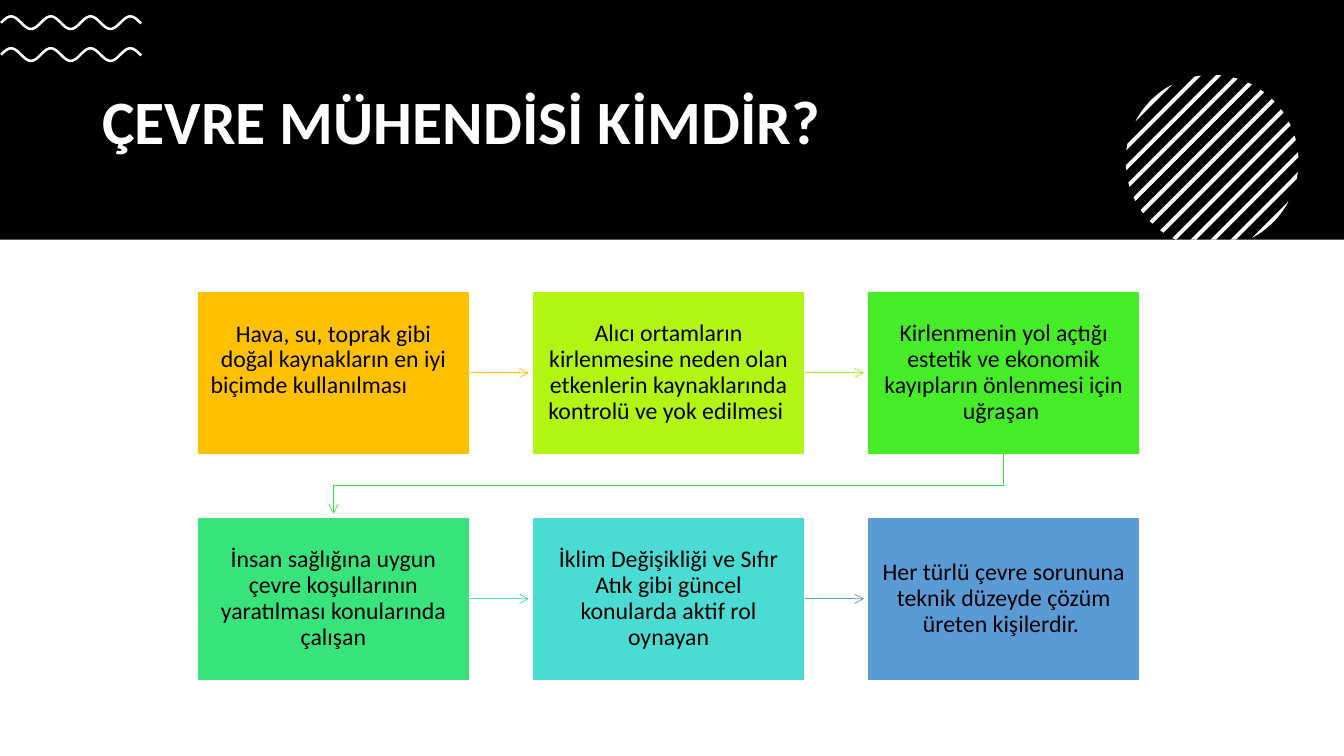
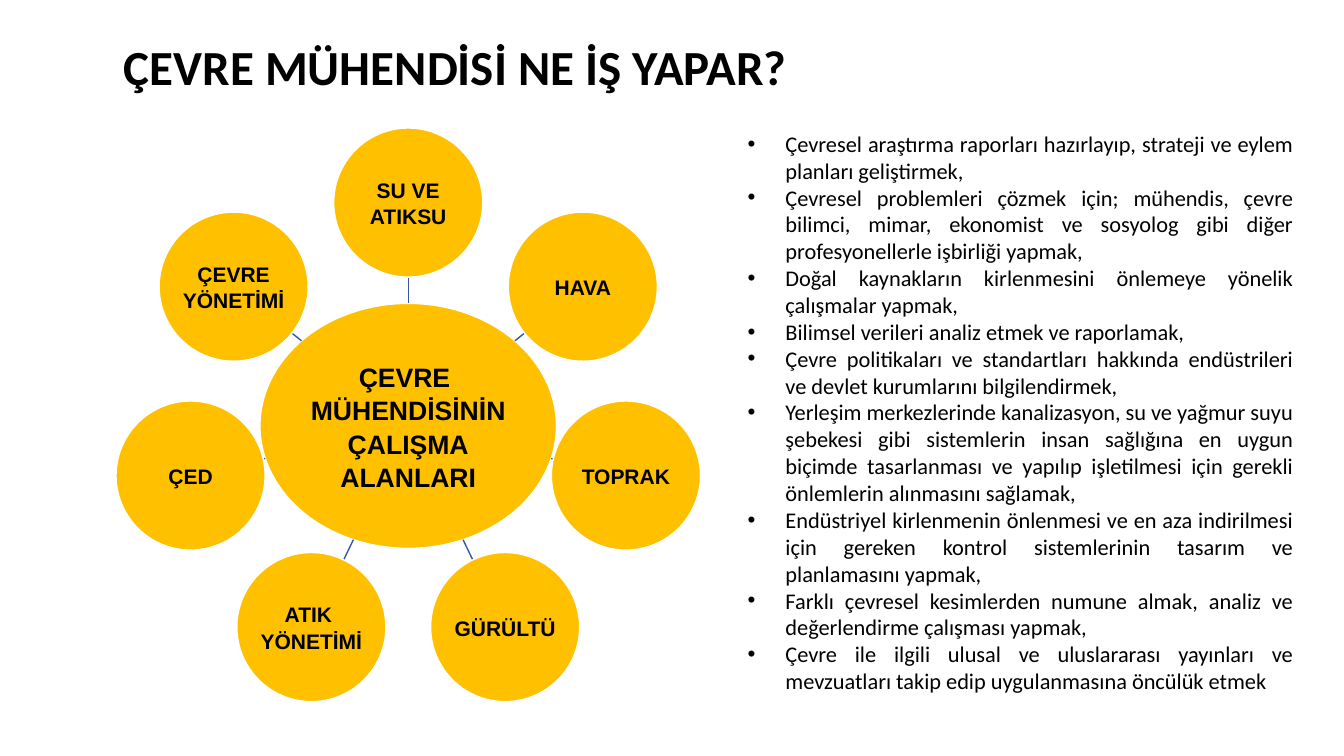
from math import cos, pi, sin, sqrt

from lxml import etree
from pptx import Presentation
from pptx.dml.color import RGBColor
from pptx.enum import shapes as sh, text as tx
from pptx.oxml.ns import qn
from pptx.util import Pt

# Shared look
BLACK, WHITE, AMBER, SPOKE = "000000", "FFFFFF", "FFC000", "365B9D"
BODY_FONT, HUB_FONT = "Calibri", "Arial"
CENTER, LEFT, JUSTIFY = tx.PP_ALIGN.CENTER, tx.PP_ALIGN.LEFT, tx.PP_ALIGN.JUSTIFY

# Slide 1 content: (paragraphs with alignment), box colour, colour of the arrow that follows
WHO_TITLE = "ÇEVRE MÜHENDİSİ KİMDİR?"
STEPS = [
    ([("Hava, su, toprak gibi doğal kaynakların en iyi", CENTER),
      ("biçimde kullanılması", LEFT)], "FFC000", "FFC000"),
    ([("Alıcı ortamların kirlenmesine neden olan etkenlerin kaynaklarında kontrolü "
       "ve yok edilmesi ", CENTER)], "B2F514", "94F319"),
    ([("Kirlenmenin yol açtığı estetik ve ekonomik kayıpların önlenmesi için uğraşan ",
       CENTER)], "46EC27", "30E845"),
    ([("İnsan sağlığına uygun çevre koşullarının yaratılması konularında çalışan",
       CENTER)], "39E37B", "46DEBF"),
    ([("İklim Değişikliği ve Sıfır Atık gibi güncel konularda aktif rol oynayan",
       CENTER)], "4ADCD2", "5B9BD5"),
    ([("Her türlü çevre sorununa teknik düzeyde çözüm üreten kişilerdir. ",
       CENTER)], "5B9BD5", None),
]

# Slide 2 content: fields run clockwise from the top
WORK_TITLE = "ÇEVRE MÜHENDİSİ NE İŞ YAPAR?"
HUB = ["ÇEVRE ", "MÜHENDİSİNİN", "ÇALIŞMA", "ALANLARI"]
FIELDS = [["SU VE ATIKSU"], ["HAVA"], ["TOPRAK"], ["GÜRÜLTÜ"],
          ["ATIK ", "YÖNETİMİ"], ["ÇED"], ["ÇEVRE YÖNETİMİ"]]
DUTIES = [
    "Çevresel araştırma raporları hazırlayıp, strateji ve eylem planları geliştirmek,",
    "Çevresel problemleri çözmek için; mühendis, çevre bilimci, mimar, ekonomist ve "
    "sosyolog gibi diğer profesyonellerle işbirliği yapmak,",
    "Doğal kaynakların kirlenmesini önlemeye yönelik çalışmalar yapmak,",
    "Bilimsel verileri analiz etmek ve raporlamak,",
    "Çevre politikaları ve standartları hakkında endüstrileri ve devlet kurumlarını "
    "bilgilendirmek,",
    "Yerleşim merkezlerinde kanalizasyon, su ve yağmur suyu şebekesi gibi sistemlerin "
    "insan sağlığına en uygun biçimde tasarlanması ve yapılıp işletilmesi için gerekli "
    "önlemlerin alınmasını sağlamak,",
    "Endüstriyel kirlenmenin önlenmesi ve en aza indirilmesi için gereken kontrol "
    "sistemlerinin tasarım ve planlamasını yapmak,",
    "Farklı çevresel kesimlerden numune almak, analiz ve değerlendirme çalışması yapmak,",
    "Çevre ile ilgili ulusal ve uluslararası yayınları ve mevzuatları takip edip "
    "uygulanmasına öncülük etmek",
]


def rgb(value):
    return RGBColor.from_string(value)


def paint(shape, fill=None, line=None, width=1):
    shape.shadow.inherit = False
    if fill:
        shape.fill.solid()
        shape.fill.fore_color.rgb = rgb(fill)
    else:
        shape.fill.background()
    if line:
        shape.line.color.rgb = rgb(line)
        shape.line.width = Pt(width)
    else:
        shape.line.fill.background()


def block(slide, kind, x, y, w, h, fill, line=None):
    shape = slide.shapes.add_shape(kind, Pt(x), Pt(y), Pt(w), Pt(h))
    paint(shape, fill, line)
    return shape


def outline(slide, points, closed=True):
    (x, y), *rest = [(Pt(px), Pt(py)) for px, py in points]
    builder = slide.shapes.build_freeform(x, y, scale=1.0)
    builder.add_line_segments(rest, close=closed)
    return builder.convert_to_shape()


def rule(slide, start, end, color, width):
    line = slide.shapes.add_connector(
        sh.MSO_CONNECTOR.STRAIGHT, *(Pt(v) for v in (*start, *end)))
    line.line.color.rgb = rgb(color)
    line.line.width = Pt(width)
    etree.SubElement(line._element.spPr, qn("a:effectLst"))
    return line


def add_arrowhead(line):
    line.line._get_or_add_ln().append(
        etree.Element(qn("a:tailEnd"), type="arrow"))


def write(shape, paragraphs, size, font=BODY_FONT, color=BLACK, bold=False,
          spacing=1.0, insets=(7.2, 3.6, 7.2, 3.6), anchor=tx.MSO_ANCHOR.MIDDLE):
    """Fill a shape with (text, alignment) paragraphs."""
    frame = shape.text_frame
    frame.word_wrap = True
    frame.vertical_anchor = anchor
    (frame.margin_left, frame.margin_top,
     frame.margin_right, frame.margin_bottom) = map(Pt, insets)
    for i, (words, align) in enumerate(paragraphs):
        p = frame.add_paragraph() if i else frame.paragraphs[0]
        p.text, p.alignment, p.line_spacing = words, align, spacing
        p.font.size, p.font.name, p.font.bold = Pt(size), font, bold
        p.font.color.rgb = rgb(color)
    return frame.paragraphs


def text_box(slide, x, y, w, h):
    return slide.shapes.add_textbox(Pt(x), Pt(y), Pt(w), Pt(h))


def add_title(slide, words, x, y, w, h, size, color):
    write(text_box(slide, x, y, w, h), [(words, LEFT)], size,
          color=color, bold=True, spacing=0.9)


def draw_wave(slide, mid_y):
    start, end, crest, period, height, steps = 0.7, 100.8, 7.9, 28.4, 4.5, 84
    xs = [start + (end - start) * i / steps for i in range(steps + 1)]
    wave = outline(slide, [(x, mid_y - height * cos(2 * pi * (x - crest) / period))
                           for x in xs], closed=False)
    paint(wave, line=WHITE, width=1.8)


def draw_striped_disc(slide, cx, cy, radius, floor):
    """Diagonal stripes cut to a disc, and to the band's lower edge."""
    gap, half, steps = 14.2, 2, 6
    limit = radius * sqrt(2)
    for k in range(-6, 7):
        upper, lower = [], []
        for i in range(steps + 1):
            offset = k * gap - half + 2 * half * i / steps
            offset = max(-limit, min(limit, offset))
            reach = sqrt(max(0, 2 * radius ** 2 - offset ** 2))
            upper.append((cx + (offset + reach) / 2, cy + (offset - reach) / 2))
            y = min(floor, cy + (offset + reach) / 2)
            lower.append((cx + cy + offset - y, y))
        paint(outline(slide, upper + lower[::-1]), WHITE)


def build_who(slide):
    # Header band with ornaments
    band_h = 171.2
    block(slide, sh.MSO_SHAPE.RECTANGLE, 0, 0, 960, band_h, BLACK)
    add_title(slide, WHO_TITLE, 66, 44.6, 828, 88.6, 44, WHITE)
    for mid_y in (39, 16.2):
        draw_wave(slide, mid_y)
    draw_striped_disc(slide, 865.8, 115.2, 61.7, band_h)

    # Steps in a grid, joined by arrows
    columns, left, top = 3, 141, 208
    box_w, box_h, pitch_x, pitch_y, arrow_len = 194.4, 116.6, 239.4, 161.4, 42.4
    text_line = 18.3
    for i, (paragraphs, fill, arrow_color) in enumerate(STEPS):
        row, col = divmod(i, columns)
        x, y = left + col * pitch_x, top + row * pitch_y
        box = block(slide, sh.MSO_SHAPE.RECTANGLE, x, y, box_w, box_h, fill, WHITE)
        # A split text sits one line higher
        bottom = 10 + text_line * (len(paragraphs) - 1)
        write(box, paragraphs, 17, spacing=0.9, insets=(9.5, 10, 9.5, bottom))
        if not arrow_color:
            continue
        if col < columns - 1:
            mid = y + box_h / 2
            arrow = rule(slide, (x + box_w, mid), (x + box_w + arrow_len, mid),
                         arrow_color, 0.5)
        else:
            start_x, end_x = x + box_w / 2, left + box_w / 2
            start_y = y + box_h
            turn_y = start_y + (pitch_y - box_h) / 2
            arrow = outline(slide, [(start_x, start_y), (start_x, turn_y),
                                    (end_x, turn_y), (end_x, start_y + arrow_len)],
                            closed=False)
            paint(arrow, line=arrow_color, width=0.5)
        add_arrowhead(arrow)


def build_work(slide):
    # Hub, spokes and fields around it
    cx, cy, hub_w, hub_h, ring, field_d = 291.6, 304.2, 211.8, 175, 159.5, 106.5

    def bubble(x, y, w, h, lines, size):
        oval = block(slide, sh.MSO_SHAPE.OVAL, x - w / 2, y - h / 2, w, h, AMBER, WHITE)
        write(oval, [(line, CENTER) for line in lines], size, HUB_FONT, bold=True,
              spacing=1.05, insets=(0.8,) * 4)

    bubble(cx, cy, hub_w, hub_h, HUB, 19)
    for i, lines in enumerate(FIELDS):
        angle = 2 * pi * i / len(FIELDS)
        dx, dy = sin(angle), -cos(angle)
        hub_edge = 1 / sqrt((2 * dx / hub_w) ** 2 + (2 * dy / hub_h) ** 2)
        start, end = [(cx + r * dx, cy + r * dy) for r in (hub_edge, ring - field_d / 2)]
        rule(slide, start, end, SPOKE, 1)
        bubble(cx + ring * dx, cy + ring * dy, field_d, field_d, lines, 15)

    add_title(slide, WORK_TITLE, 81.4, 25.6, 648, 48, 35, BLACK)

    # Bulleted duties
    duties = write(text_box(slide, 527, 89.3, 404, 414.7),
                   [(duty, JUSTIFY) for duty in DUTIES], 16, anchor=tx.MSO_ANCHOR.TOP)
    for p in duties:
        props = p._p.get_or_add_pPr()
        props.set("marL", str(Pt(27)))
        props.set("indent", str(-Pt(27)))
        bullet_font = etree.Element(qn("a:buFont"), typeface=HUB_FONT)
        bullet = etree.Element(qn("a:buChar"), char="•")
        props.find(qn("a:lnSpc")).addnext(bullet_font)
        bullet_font.addnext(bullet)


def main():
    deck = Presentation()
    deck.slide_width, deck.slide_height = Pt(960), Pt(540)
    for build in (build_who, build_work):
        build(deck.slides.add_slide(deck.slide_layouts[6]))
    deck.save("out.pptx")


if __name__ == "__main__":
    main()
